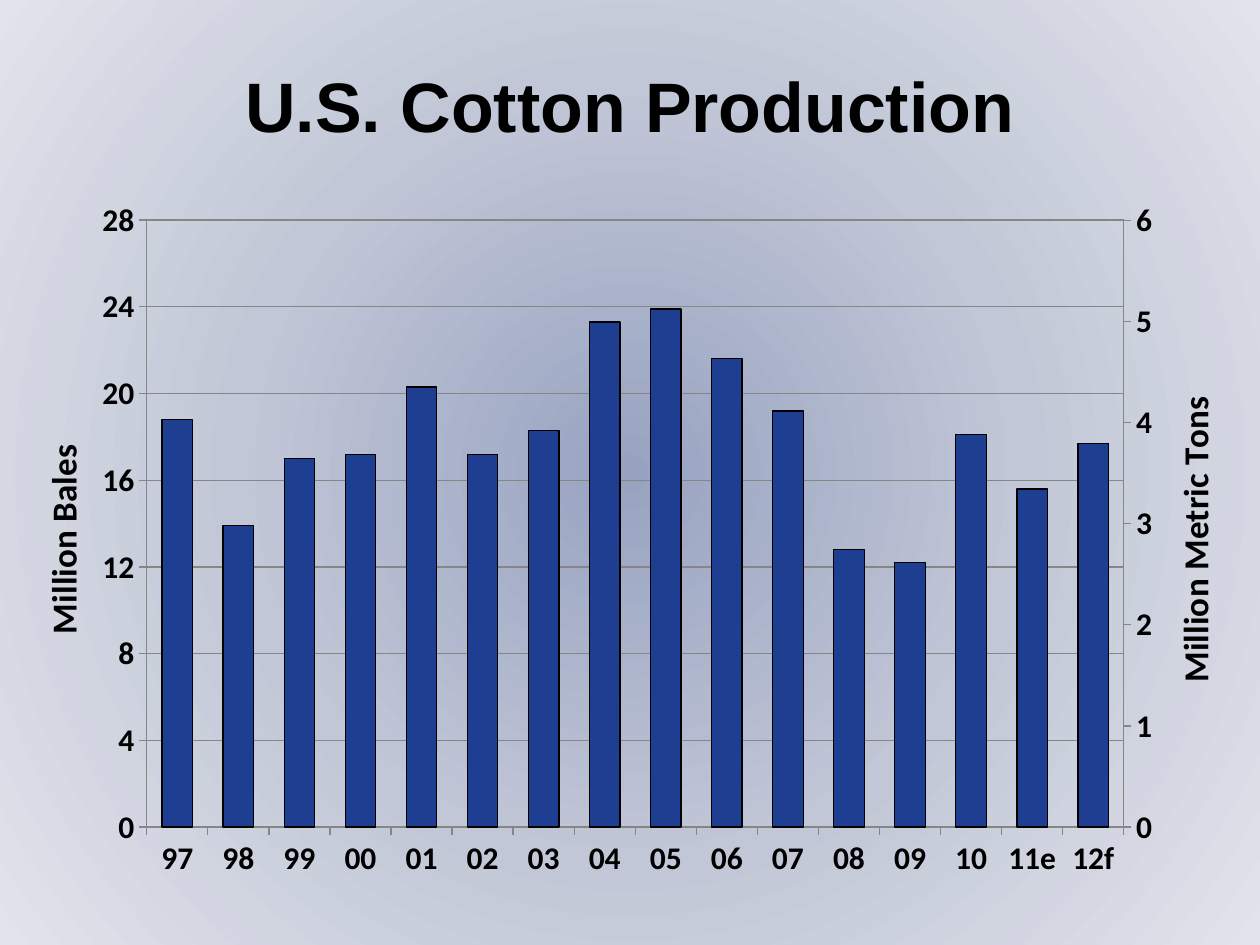
"""Build a slide with a column chart of U.S. cotton production on two scales."""
import copy

import lxml.etree
import pptx
import pptx.chart.axis
import pptx.chart.data
import pptx.dml.color
import pptx.enum.chart
import pptx.enum.text
import pptx.oxml
import pptx.oxml.ns
import pptx.util

TITLE = "U.S. Cotton Production"
YEARS = ["97", "98", "99", "00", "01", "02", "03", "04",
         "05", "06", "07", "08", "09", "10", "11e", "12f"]
BALES = [18.8, 13.9, 17, 17.2, 20.3, 17.2, 18.3, 23.3,
         23.9, 21.6, 19.2, 12.8, 12.2, 18.1, 15.6, 17.7]
TONS = [4.1, 3, 3.7, 3.7, 4.4, 3.7, 4, 5.1,
        5.2, 4.7, 4.2, 2.8, 2.7, 3.9, 3.4, 3.8]
BACKGROUND = [(0, "98A3C1"), (50, "C2C7D7"), (100, "E1E4EB")]
PLOT_AREA = {"x": 0.096, "y": 0.097, "w": 0.817, "h": 0.804}
TITLE_BOX = (32, 42, 1196, 126)
CHART_BOX = (32, 147, 1196, 755)
BLACK, BLUE, GREY = "000000", "1E3E92", "868686"
RIGHT_IDS = {"cat": "50010", "val": "50020"}
qn = pptx.oxml.ns.qn


def px(length):
    return round(length * 914400 / 126)


def color(value):
    return pptx.dml.color.RGBColor.from_string(value)


def format_font(font, size, name):
    font.size, font.name, font.bold = pptx.util.Pt(size), name, True
    font.color.rgb = color(BLACK)


def write(frame, text, size, name):
    paragraph = frame.paragraphs[0]
    paragraph.alignment = pptx.enum.text.PP_ALIGN.CENTER
    run = paragraph.add_run()
    run.text = text
    format_font(run.font, size, name)


def paint_background(slide):
    fill = slide.background.fill
    fill.gradient()
    gradient = slide._element.find(".//" + qn("a:gradFill"))
    stops = "".join(f'<a:gs pos="{position * 1000}"><a:srgbClr val="{value}"/></a:gs>'
                    for position, value in BACKGROUND)
    source = pptx.oxml.parse_xml(
        f'<a:gradFill {pptx.oxml.ns.nsdecls("a")}><a:gsLst>{stops}</a:gsLst>'
        '<a:path path="circle"><a:fillToRect l="50000" t="50000" r="50000" b="50000"/>'
        '</a:path></a:gradFill>')
    gradient[:] = list(source)


def format_axis(axis):
    axis.major_tick_mark = pptx.enum.chart.XL_TICK_MARK.OUTSIDE
    axis.minor_tick_mark = pptx.enum.chart.XL_TICK_MARK.NONE
    axis.format.line.color.rgb = color(GREY)
    axis.format.line.width = pptx.util.Pt(0.75)
    format_font(axis.tick_labels.font, 18, "Calibri")


def format_value_axis(axis, title, maximum, step, gridlines):
    format_axis(axis)
    axis.minimum_scale, axis.maximum_scale, axis.major_unit = 0, maximum, step
    axis.tick_labels.number_format = "0"
    axis.tick_labels.number_format_is_linked = False
    axis.has_major_gridlines = gridlines
    if gridlines:
        axis.major_gridlines.format.line.color.rgb = color(GREY)
        axis.major_gridlines.format.line.width = pptx.util.Pt(0.75)
    frame = axis.axis_title.text_frame
    write(frame, title, 20, "Calibri")
    body = frame._txBody.find(qn("a:bodyPr"))
    body.set("rot", "-5400000")
    body.set("vert", "horz")


def add_right_axes(plot_area):
    """Move the second series to its own axes and return those axes."""
    left_bars = plot_area.find(qn("c:barChart"))
    right_bars = copy.deepcopy(left_bars)
    left_bars.addnext(right_bars)
    left_bars.remove(left_bars.findall(qn("c:ser"))[1])
    right_bars.remove(right_bars.find(qn("c:ser")))
    for element, value in zip(right_bars.findall(qn("c:axId")), RIGHT_IDS.values()):
        element.set("val", value)
    category = copy.deepcopy(plot_area.find(qn("c:catAx")))
    value_axis = copy.deepcopy(plot_area.find(qn("c:valAx")))
    plot_area.find(qn("c:valAx")).addnext(value_axis)
    value_axis.addnext(category)
    for axis, own, other in ((category, "cat", "val"), (value_axis, "val", "cat")):
        axis.find(qn("c:axId")).set("val", RIGHT_IDS[own])
        axis.find(qn("c:crossAx")).set("val", RIGHT_IDS[other])
    value_axis.find(qn("c:axPos")).set("val", "r")
    value_axis.find(qn("c:crosses")).set("val", "max")
    return pptx.chart.axis.CategoryAxis(category), pptx.chart.axis.ValueAxis(value_axis)


def place_plot(plot_area):
    old = plot_area.find(qn("c:layout"))
    if old is not None:
        plot_area.remove(old)
    layout = lxml.etree.Element(qn("c:layout"))
    manual = lxml.etree.SubElement(layout, qn("c:manualLayout"))
    settings = {"layoutTarget": "inner", "xMode": "edge", "yMode": "edge", **PLOT_AREA}
    for name, value in settings.items():
        lxml.etree.SubElement(manual, qn("c:" + name)).set("val", str(value))
    plot_area.insert(0, layout)


def add_production_chart(slide):
    data = pptx.chart.data.CategoryChartData()
    data.categories = YEARS
    data.add_series("Series 1", BALES)
    data.add_series("Series 2", TONS)
    chart = slide.shapes.add_chart(pptx.enum.chart.XL_CHART_TYPE.COLUMN_CLUSTERED,
                                   *map(px, CHART_BOX), data).chart
    chart.has_legend = chart.has_title = False
    format_font(chart.font, 18, "Calibri")
    plot = chart.plots[0]
    plot.gap_width, plot.vary_by_categories = 100, False
    bales, tons = plot.series
    bales.format.fill.solid()
    bales.format.fill.fore_color.rgb = color(BLUE)
    bales.format.line.color.rgb = color(BLACK)
    bales.format.line.width = pptx.util.Pt(0.75)
    tons.format.fill.background()
    tons.format.line.fill.background()
    plot_area = chart._chartSpace.find(".//" + qn("c:plotArea"))
    place_plot(plot_area)
    left_category, left_value = chart.category_axis, chart.value_axis
    right_category, right_value = add_right_axes(plot_area)
    right_category.visible = False
    format_axis(left_category)
    left_category.tick_label_position = pptx.enum.chart.XL_TICK_LABEL_POSITION.LOW
    format_value_axis(left_value, "Million Bales", 28, 4, True)
    format_value_axis(right_value, "Million Metric Tons", 6, 1, False)


def main():
    presentation = pptx.Presentation()
    presentation.slide_width, presentation.slide_height = px(1260), px(945)
    slide = presentation.slides.add_slide(presentation.slide_layouts[6])
    paint_background(slide)
    frame = slide.shapes.add_textbox(*map(px, TITLE_BOX)).text_frame
    frame.word_wrap = True
    frame.vertical_anchor = pptx.enum.text.MSO_ANCHOR.MIDDLE
    write(frame, TITLE, 40, "Arial")
    add_production_chart(slide)
    presentation.save("out.pptx")


if __name__ == "__main__":
    main()
